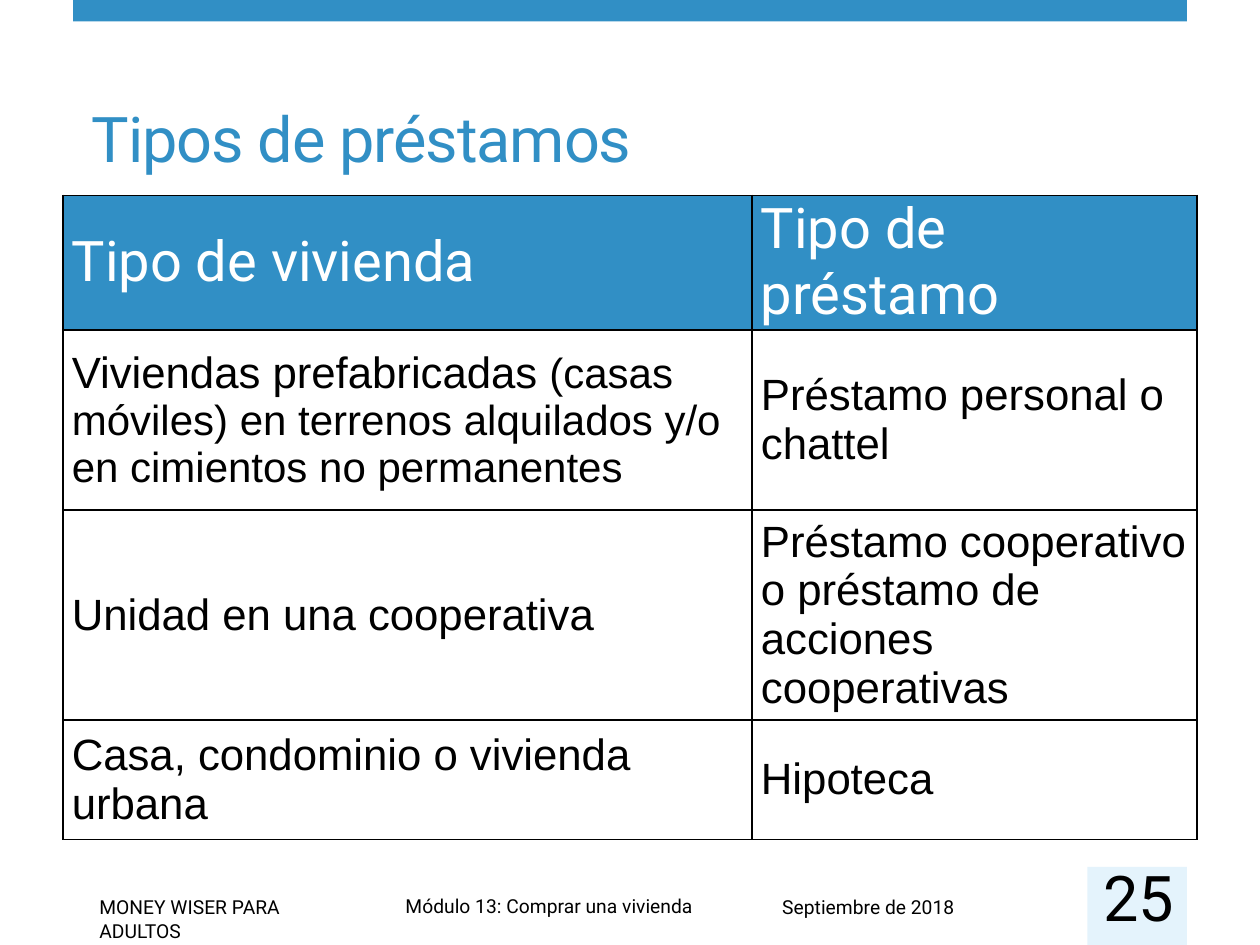
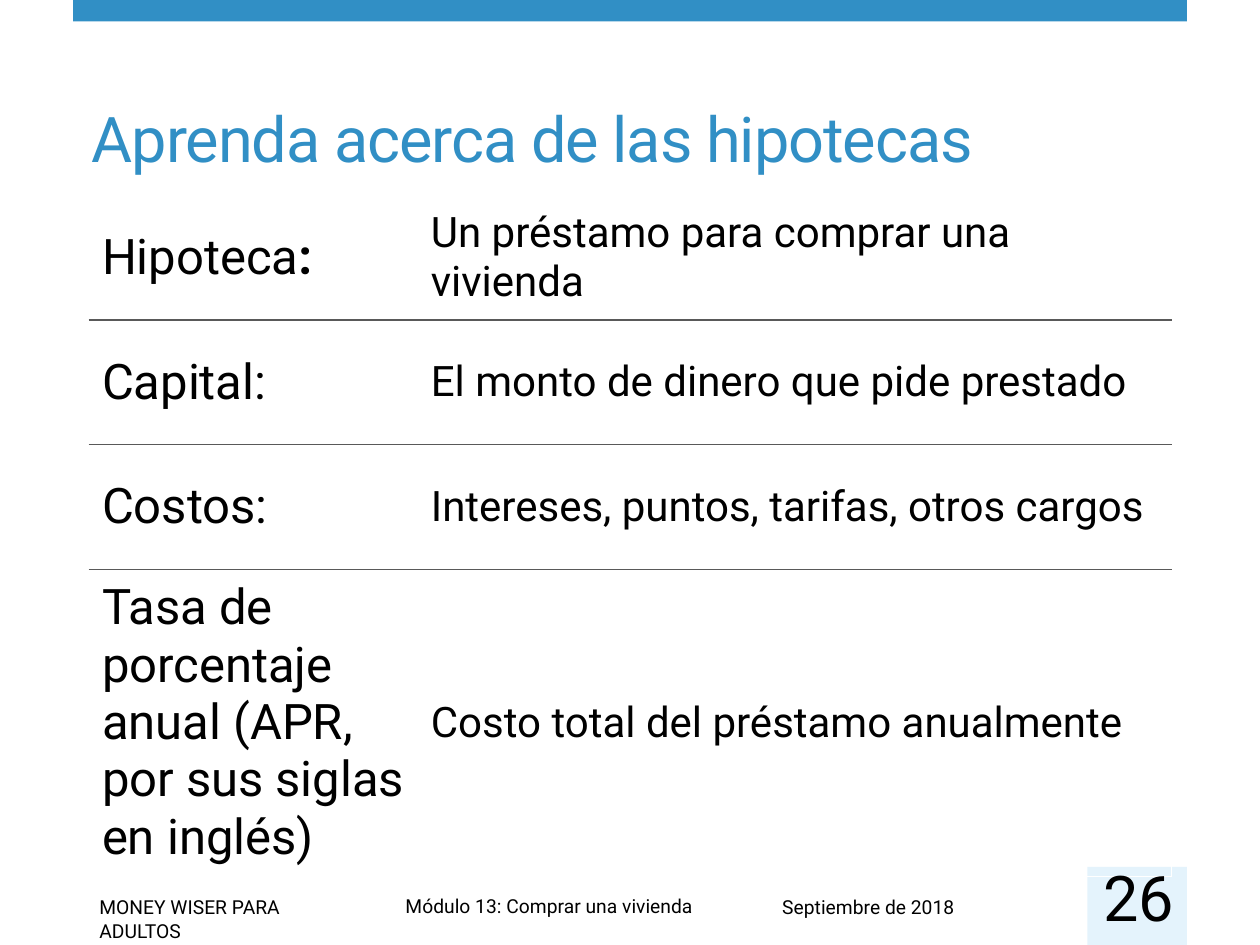
from dataclasses import dataclass

from lxml.etree import SubElement
from pptx import Presentation
from pptx.dml.color import RGBColor
from pptx.enum.shapes import MSO_SHAPE
from pptx.enum.text import MSO_ANCHOR, PP_ALIGN
from pptx.oxml.ns import qn
from pptx.util import Inches, Pt

COLORS = {
    "blue": "318FC5",
    "pale": "E4F3FC",
    "black": "000000",
    "white": "FFFFFF",
    "gray": "595959",
}
FONT = "Roboto"


@dataclass(frozen=True)
class Box:
    left: float
    top: float
    width: float
    height: float

    def lengths(self) -> list:
        return [Inches(v) for v in (self.left, self.top, self.width, self.height)]


@dataclass(frozen=True)
class Style:
    size: float
    color: str = "black"
    font: str = FONT
    bold: bool = False


@dataclass(frozen=True)
class Band:
    box: Box
    color: str


@dataclass(frozen=True)
class Label:
    box: Box
    text: str


@dataclass(frozen=True)
class Cell:
    runs: list
    borders: dict
    fill: str = ""


@dataclass(frozen=True)
class Grid:
    box: Box
    widths: list
    heights: list
    cells: list
    margins: tuple
    space_after: float = 0


TITLE = Style(36, "blue")
FOOTER = Style(11)
NUMBER = Style(36)
TITLE_BOX = Box(0.63, 0.48, 8.2, 0.96)
NUMBER_BOX = Box(8.65, 6.96, 0.78, 0.31)
BANDS = [
    Band(Box(0.58, 0, 8.84, 0.17), "blue"),
    Band(Box(8.63, 6.88, 0.79, 0.62), "pale"),
]
FOOTERS = [
    Label(Box(0.69, 7.06, 2.23, 0.29), "MONEY WISER PARA ADULTOS"),
    Label(Box(3.12, 7.05, 5.66, 0.29), "Módulo 13: Comprar una vivienda"),
    Label(Box(6.11, 7.06, 2.52, 0.29), "Septiembre de 2018"),
]

LOAN_HEAD = Style(32, "white")
LOAN_BODY = Style(25, font="Arial")
LOAN_SMALL = Style(24, font="Arial")
LOAN_HEADERS = ["Tipo de vivienda", "Tipo de préstamo"]
LOAN_ROWS = [
    [
        [
            ("Viviendas prefabricadas ", LOAN_BODY),
            (
                "(casas móviles) en terrenos alquilados y/o en cimientos no permanentes",
                LOAN_SMALL,
            ),
        ],
        [("Préstamo personal o chattel", LOAN_BODY)],
    ],
    [
        [("Unidad en una cooperativa", LOAN_BODY)],
        [("Préstamo cooperativo o préstamo de acciones cooperativas", LOAN_BODY)],
    ],
    [
        [("Casa, condominio o vivienda urbana", LOAN_BODY)],
        [("Hipoteca", LOAN_BODY)],
    ],
]

TERM = Style(28)
TERM_BOLD = Style(28, bold=True)
MEANING = Style(24)
MORTGAGE_TERMS = [
    ([("Hipoteca", TERM), (":", TERM_BOLD)], "Un préstamo para comprar una vivienda"),
    ([("Capital:", TERM)], "El monto de dinero que pide prestado"),
    ([("Costos:", TERM)], "Intereses, puntos, tarifas, otros cargos"),
    (
        [("Tasa de porcentaje anual (APR, por sus siglas en inglés)", TERM)],
        "Costo total del préstamo anualmente",
    ),
]


def rgb(name: str) -> RGBColor:
    return RGBColor.from_string(COLORS[name])


def add_run(p, text: str, style: Style):
    r = p.add_run()
    r.text = text
    r.font.size = Pt(style.size)
    r.font.name = style.font
    r.font.bold = style.bold
    r.font.color.rgb = rgb(style.color)
    return r


def add_band(s, band: Band) -> None:
    sp = s.shapes.add_shape(MSO_SHAPE.RECTANGLE, *band.box.lengths())
    sp.shadow.inherit = False
    sp.fill.solid()
    sp.fill.fore_color.rgb = rgb(band.color)
    sp.line.fill.background()


def add_label(s, label: Label, style: Style, anchor=MSO_ANCHOR.TOP):
    tf = s.shapes.add_textbox(*label.box.lengths()).text_frame
    tf.word_wrap = True
    tf.vertical_anchor = anchor
    add_run(tf.paragraphs[0], label.text, style)
    return tf


def add_page(prs, title: str, number: int):
    s = prs.slides.add_slide(prs.slide_layouts[6])
    for band in BANDS:
        add_band(s, band)
    for label in FOOTERS:
        add_label(s, label, FOOTER)
    tf = add_label(s, Label(TITLE_BOX, title), TITLE, MSO_ANCHOR.BOTTOM)
    tf.paragraphs[0].runs[0].font._element.set("spc", "-60")
    return s


def add_number(s, number: int) -> None:
    tf = add_label(s, Label(NUMBER_BOX, str(number)), NUMBER, MSO_ANCHOR.MIDDLE)
    tf.margin_left = tf.margin_right = tf.margin_top = tf.margin_bottom = 0
    tf.paragraphs[0].alignment = PP_ALIGN.CENTER


def set_borders(cell, borders: dict) -> None:
    tc_pr = cell._tc.get_or_add_tcPr()
    for side in "LRTB":
        ln = SubElement(tc_pr, qn(f"a:ln{side}"), w=str(Pt(1)))
        fill = SubElement(ln, qn("a:solidFill"))
        SubElement(fill, qn("a:srgbClr"), val=COLORS[borders[side]])


def fill_cell(cell, content: Cell, grid: Grid) -> None:
    set_borders(cell, content.borders)
    if content.fill:
        cell.fill.solid()
        cell.fill.fore_color.rgb = rgb(content.fill)
    else:
        cell.fill.background()
    cell.vertical_anchor = MSO_ANCHOR.MIDDLE
    side, end = (Inches(m) for m in grid.margins)
    cell.margin_left = cell.margin_right = side
    cell.margin_top = cell.margin_bottom = end
    p = cell.text_frame.paragraphs[0]
    p.space_after = Pt(grid.space_after)
    for text, style in content.runs:
        add_run(p, text, style)


def add_grid(s, grid: Grid) -> None:
    shape = s.shapes.add_table(
        len(grid.heights), len(grid.widths), *grid.box.lengths()
    )
    table = shape.table
    table.first_row = table.horz_banding = False
    for column, width in zip(table.columns, grid.widths):
        column.width = Inches(width)
    for row, height, contents in zip(table.rows, grid.heights, grid.cells):
        row.height = Inches(height)
        for cell, content in zip(row.cells, contents):
            fill_cell(cell, content, grid)


def loan_grid() -> Grid:
    borders = dict.fromkeys("LRTB", "black")
    header = [Cell([(text, LOAN_HEAD)], borders, "blue") for text in LOAN_HEADERS]
    body = [[Cell(runs, borders) for runs in row] for row in LOAN_ROWS]
    return Grid(
        Box(0.5, 1.55, 9, 4.59),
        [5.47, 3.53],
        [0.54, 1.43, 0.95, 0.95],
        [header, *body],
        (0.07, 0),
        12,
    )


def mortgage_grid() -> Grid:
    last = len(MORTGAGE_TERMS) - 1
    cells = []
    for i, (term, meaning) in enumerate(MORTGAGE_TERMS):
        borders = {
            "L": "white",
            "R": "white",
            "T": "gray" if i > 0 else "white",
            "B": "gray" if i < last else "white",
        }
        cells.append([Cell(term, borders), Cell([(meaning, MEANING)], borders)])
    return Grid(
        Box(0.71, 1.55, 8.59, 5.41),
        [2.61, 5.98],
        [0.99] * last + [1.42],
        cells,
        (0.1, 0.05),
    )


def main() -> None:
    prs = Presentation()
    prs.slide_width, prs.slide_height = Inches(10), Inches(7.5)
    pages = [
        ("Tipos de préstamos", loan_grid()),
        ("Aprenda acerca de las hipotecas", mortgage_grid()),
    ]
    for number, (title, grid) in enumerate(pages, start=25):
        s = add_page(prs, title, number)
        add_grid(s, grid)
        add_number(s, number)
    prs.save("out.pptx")


if __name__ == "__main__":
    main()
